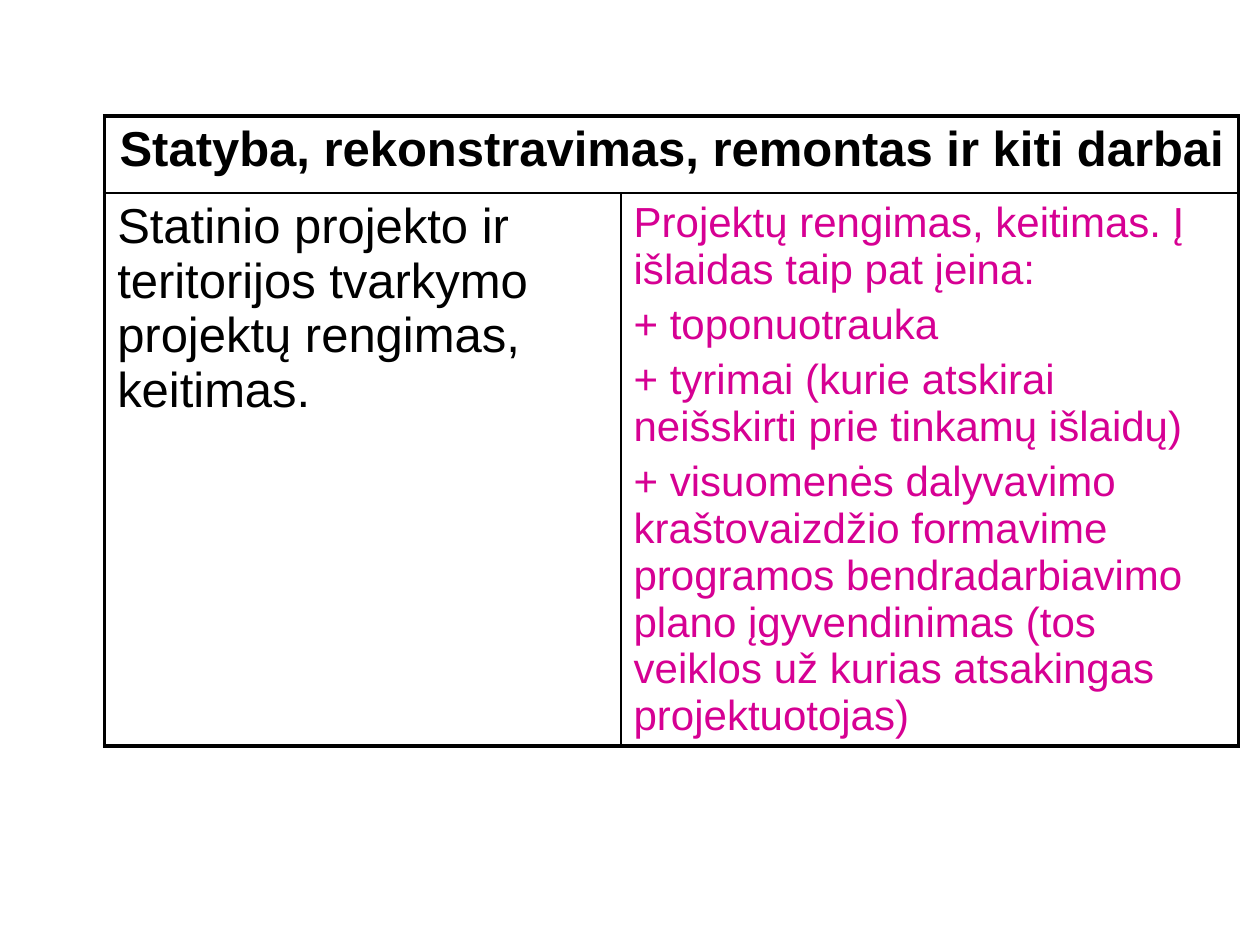
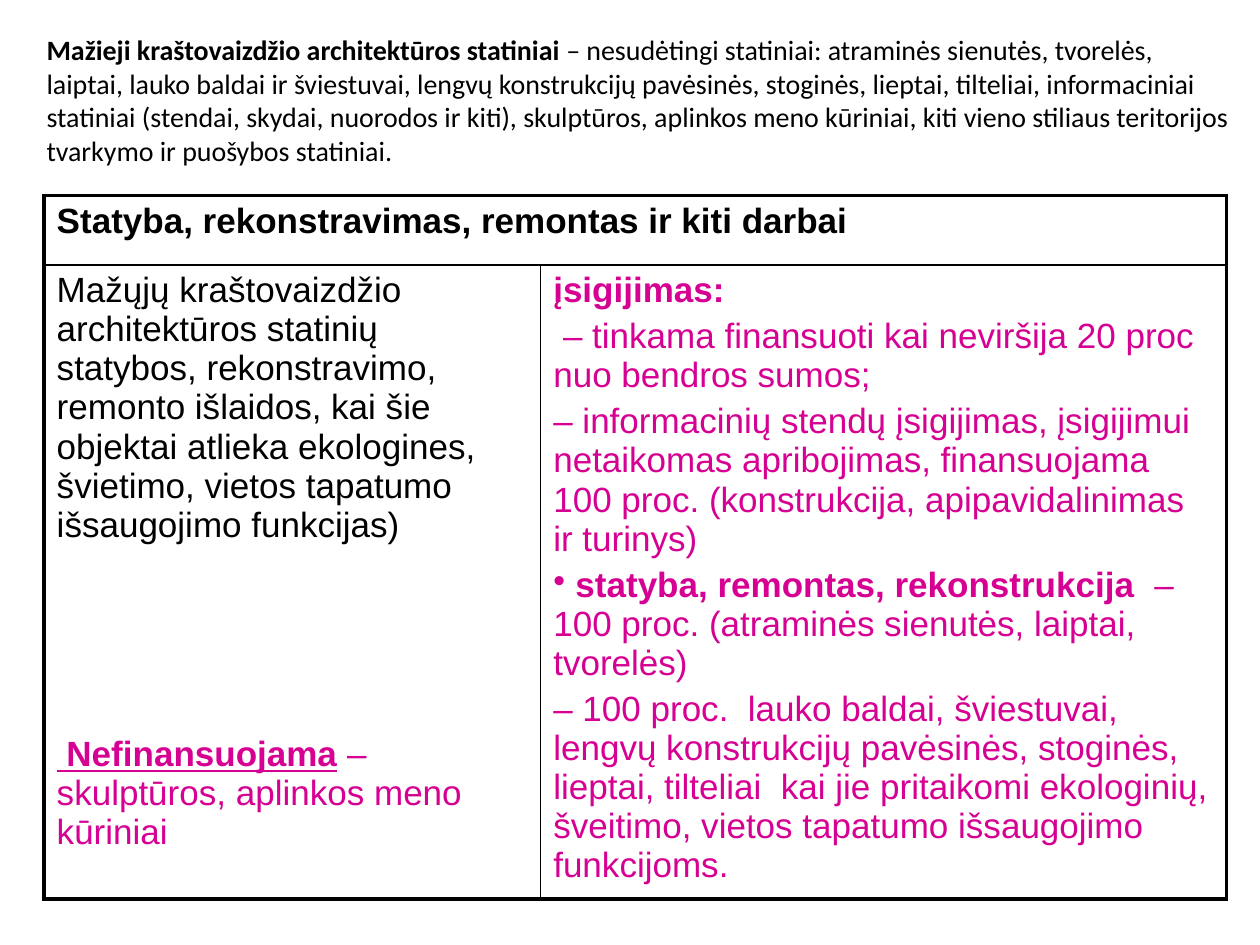
from lxml import etree
from pptx import Presentation
from pptx.dml.color import RGBColor
from pptx.enum.text import MSO_AUTO_SIZE, PP_ALIGN
from pptx.oxml.ns import qn
from pptx.util import Cm, Pt

BLACK = RGBColor(0x00, 0x00, 0x00)
MAGENTA = RGBColor(0xD6, 0x00, 0x93)
LEFT, CENTER = PP_ALIGN.LEFT, PP_ALIGN.CENTER
FIT_SHAPE = MSO_AUTO_SIZE.SHAPE_TO_FIT_TEXT

TABLE_FONT, NOTE_FONT = "Arial", "Calibri"
OUTER, INNER = Pt(2.25), Pt(1)
BLANK_LAYOUT = 6
HEADING = "Statyba, rekonstravimas, remontas ir kiti darbai"


def run(text, color=BLACK, bold=False, underline=False):
    return text, color, bold, underline


def para(*runs, before=None, bullet=None):
    return runs, before, bullet


def pink(text):
    return para(run(text, MAGENTA))


class Deck:
    def __init__(self):
        self.prs = Presentation()
        self.prs.slide_width = Cm(25.4)
        self.prs.slide_height = Cm(19.05)
        self.s = None

    def slide(self):
        self.s = self.prs.slides.add_slide(self.prs.slide_layouts[BLANK_LAYOUT])

    def fill_text(self, tf, paragraphs, font, size, align=LEFT):
        for i, (runs, before, bullet) in enumerate(paragraphs):
            p = tf.paragraphs[0] if i == 0 else tf.add_paragraph()
            p.alignment = align
            gap = before or 0.2 * size
            p.space_before = Pt(gap if i else 0)
            if bullet:
                pPr = p._p.get_or_add_pPr()
                pPr.set("marL", "0")
                pPr.set("indent", "0")
                etree.SubElement(pPr, qn("a:buChar"), char=bullet)
            for text, color, bold, underline in runs:
                r = p.add_run()
                r.text = text
                r.font.name = font
                r.font.size = Pt(size)
                r.font.color.rgb = color
                r.font.bold = bold
                r.font.underline = underline

    def borders(self, cell, **widths):
        tcPr = cell._tc.get_or_add_tcPr()
        for i, side in enumerate("LRTB"):
            ln = etree.Element(qn(f"a:ln{side}"), w=str(widths[side]))
            solid = etree.SubElement(ln, qn("a:solidFill"))
            etree.SubElement(solid, qn("a:srgbClr"), val=str(BLACK))
            tcPr.insert(i, ln)

    def table(self, left, top, cols, rows, heading_size, heading_align, columns):
        frame = self.s.shapes.add_table(2, 2, Cm(left), Cm(top), Cm(sum(cols)), Cm(sum(rows)))
        table = frame.table
        table.first_row = table.horz_banding = False
        for column, width in zip(table.columns, cols):
            column.width = Cm(width)
        for row, height in zip(table.rows, rows):
            row.height = Cm(height)
        heading, last = table.cell(0, 0), table.cell(0, 1)
        heading.merge(last)
        for cell in (heading, last):
            cell.fill.background()
            self.borders(cell, L=OUTER, R=OUTER, T=OUTER, B=INNER)
        self.fill_text(heading.text_frame, [para(run(HEADING, bold=True))],
                       TABLE_FONT, heading_size, heading_align)
        for i, (size, paragraphs) in enumerate(columns):
            cell = table.cell(1, i)
            cell.fill.background()
            self.borders(cell, L=INNER if i else OUTER, R=OUTER if i else INNER,
                         T=INNER, B=OUTER)
            self.fill_text(cell.text_frame, paragraphs, TABLE_FONT, size)

    def note(self, left, top, width, height, size, *runs):
        box = self.s.shapes.add_textbox(Cm(left), Cm(top), Cm(width), Cm(height))
        tf = box.text_frame
        tf.word_wrap = True
        tf.auto_size = FIT_SHAPE
        self.fill_text(tf, [para(*runs)], NOTE_FONT, size)


def project_slide(deck):
    deck.slide()
    planning = [para(run("Statinio projekto ir teritorijos tvarkymo projektų rengimas, keitimas."))]
    costs = [
        pink("Projektų rengimas, keitimas. Į išlaidas taip pat įeina:"),
        pink("+ toponuotrauka"),
        pink("+ tyrimai (kurie atskirai neišskirti prie tinkamų išlaidų)"),
        pink("+ visuomenės dalyvavimo kraštovaizdžio formavime programos bendradarbiavimo "
             "plano įgyvendinimas (tos veiklos už kurias atsakingas projektuotojas)"),
    ]
    deck.table(2.11, 2.34, (10.41, 12.45), (1.55, 11.15), 28, CENTER,
               [(28, planning), (24, costs)])


def small_structures_slide(deck):
    deck.slide()
    structures = [
        para(run("Mažųjų kraštovaizdžio architektūros statinių statybos, rekonstravimo, "
                 "remonto išlaidos, kai šie objektai atlieka ekologines, švietimo, "
                 "vietos tapatumo išsaugojimo funkcijas)")),
        para(run(" Nefinansuojama", MAGENTA, bold=True, underline=True),
             run(" – skulptūros, aplinkos meno kūriniai", MAGENTA), before=109),
    ]
    funding = [
        para(run("įsigijimas:", MAGENTA, bold=True)),
        pink(" – tinkama finansuoti kai neviršija 20 proc nuo bendros sumos;"),
        pink("– informacinių stendų įsigijimas, įsigijimui netaikomas apribojimas, "
             "finansuojama 100 proc. (konstrukcija, apipavidalinimas ir turinys)"),
        para(run(" ", MAGENTA),
             run("statyba, remontas, rekonstrukcija", MAGENTA, bold=True),
             run("  – 100 proc. (atraminės sienutės, laiptai, tvorelės)", MAGENTA),
             bullet="•"),
        pink("– 100 proc.  lauko baldai, šviestuvai, lengvų konstrukcijų pavėsinės, "
             "stoginės, lieptai, tilteliai  kai jie pritaikomi ekologinių, šveitimo, "
             "vietos tapatumo išsaugojimo funkcijoms."),
    ]
    deck.table(0.89, 3.94, (10.01, 13.82), (1.4, 12.78), 20, LEFT,
               [(20, structures), (20, funding)])
    deck.note(0.69, 0.53, 24.41, 2.97, 16,
              run("Mažieji kraštovaizdžio architektūros statiniai", bold=True),
              run(" – nesudėtingi statiniai: atraminės sienutės, tvorelės, laiptai, "
                  "lauko baldai ir šviestuvai, lengvų konstrukcijų pavėsinės, stoginės, "
                  "lieptai, tilteliai, informaciniai statiniai (stendai, skydai, nuorodos "
                  "ir kiti), skulptūros, aplinkos meno kūriniai, kiti vieno stiliaus "
                  "teritorijos tvarkymo ir puošybos statiniai."))


def main():
    deck = Deck()
    project_slide(deck)
    small_structures_slide(deck)
    deck.prs.save("out.pptx")


if __name__ == "__main__":
    main()
